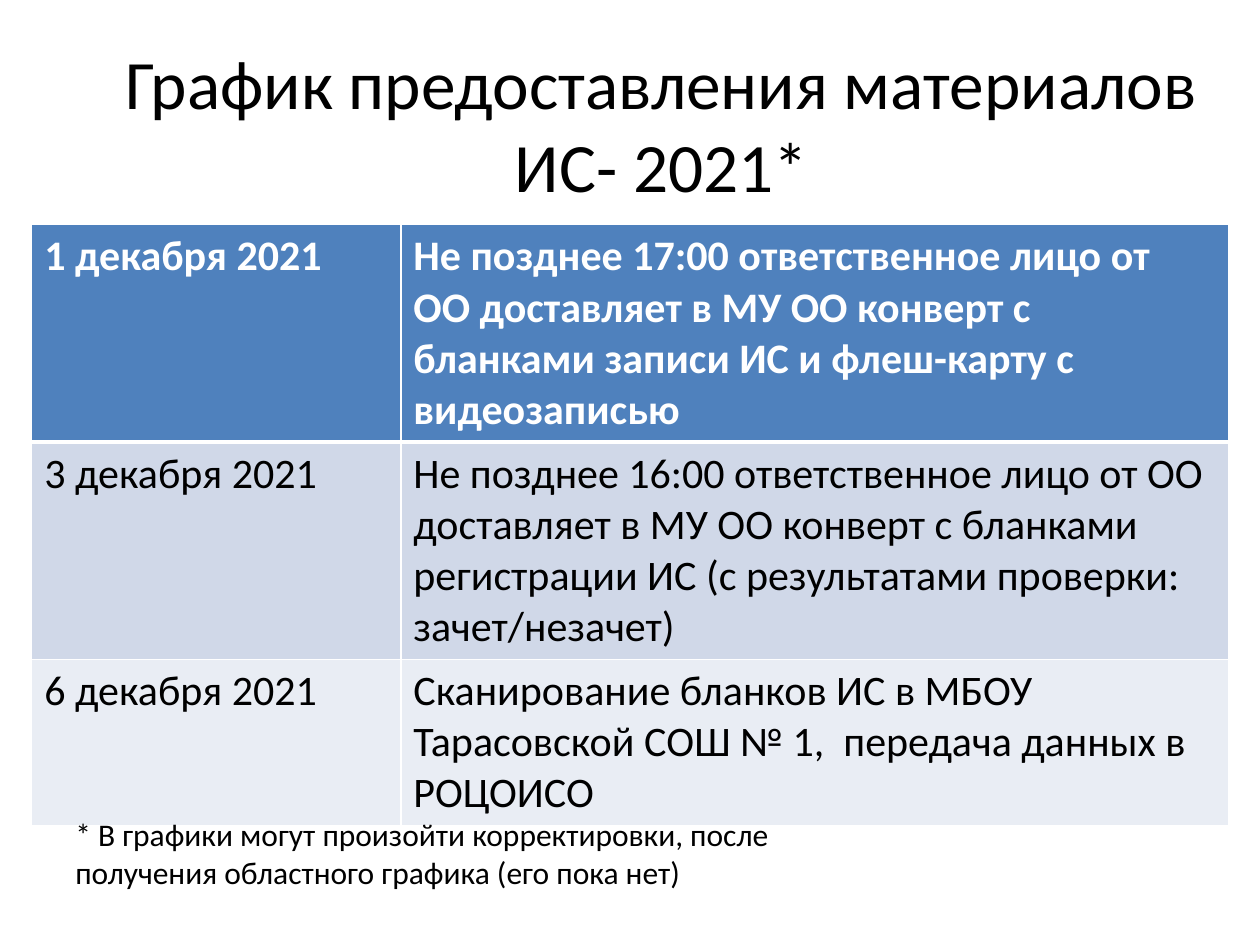
from lxml import etree
from pptx import Presentation
from pptx.dml.color import RGBColor
from pptx.enum.text import MSO_ANCHOR, PP_ALIGN
from pptx.oxml.ns import qn
from pptx.util import Cm, Pt

CENTER, LEFT = PP_ALIGN.CENTER, PP_ALIGN.LEFT
MIDDLE, TOP = MSO_ANCHOR.MIDDLE, MSO_ANCHOR.TOP

COLORS = {
    "text": "000000",
    "header_text": "FFFFFF",
    "header": "4F81BD",
    "band_dark": "D0D8E8",
    "band_light": "E9EDF4",
    "border": "FFFFFF",
}
TITLE_FONT = {"name": "Calibri", "size": Pt(39.6), "bold": False}
HEADER_FONT = {"name": "Calibri", "size": Pt(24), "bold": True}
BODY_FONT = {**HEADER_FONT, "bold": False}
NOTE_FONT = {"name": "Calibri", "size": Pt(18), "bold": False}

TITLE = "График предоставления материалов ИС- 2021*"
SCHEDULE = [
    ("1 декабря 2021",
     "Не позднее 17:00 ответственное лицо от ОО доставляет в МУ ОО конверт "
     "с бланками записи ИС и флеш-карту с видеозаписью"),
    ("3 декабря 2021",
     "Не позднее 16:00 ответственное лицо от ОО доставляет в МУ ОО конверт "
     "с бланками регистрации ИС (с результатами проверки: зачет/незачет)"),
    ("6 декабря 2021",
     "Сканирование бланков ИС в МБОУ Тарасовской СОШ № 1,  передача данных в РОЦОИСО"),
]
NOTE = ("* В графики могут произойти корректировки, после получения "
        "областного графика (его пока нет)")


def rgb(color):
    return RGBColor.from_string(COLORS[color])


def write(frame, text, font, color="text", align=LEFT):
    paragraph = frame.paragraphs[0]
    paragraph.alignment = align
    run = paragraph.add_run()
    run.text = text
    for attribute, value in font.items():
        setattr(run.font, attribute, value)
    run.font.color.rgb = rgb(color)


def add_text(slide, box, text, font, align=LEFT, anchor=TOP, bottom=Cm(0.13)):
    frame = slide.shapes.add_textbox(*box).text_frame
    frame.word_wrap = True
    frame.vertical_anchor = anchor
    frame.margin_bottom = bottom
    write(frame, text, font, align=align)


def set_borders(cell, widths):
    """Draw the left, right, top and bottom lines; widths are in points."""
    properties = cell._tc.get_or_add_tcPr()
    for index, (side, width) in enumerate(zip("LRTB", widths)):
        line = etree.Element(qn(f"a:ln{side}"), w=str(Pt(width)))
        fill = etree.SubElement(line, qn("a:solidFill"))
        etree.SubElement(fill, qn("a:srgbClr"), val=COLORS["border"])
        properties.insert(index, line)


def add_title(slide, box):
    # The deep bottom inset lifts the two lines clear of the table
    add_text(slide, box, TITLE, TITLE_FONT, CENTER, MIDDLE, bottom=Cm(1.8))


def add_schedule(slide, box):
    left, top, width, height = box
    table = slide.shapes.add_table(len(SCHEDULE), 2, left, top, width, height).table
    date_width = Cm(7.44)
    table.columns[0].width = date_width
    table.columns[1].width = width - date_width

    # The last entry runs to three lines, the others to four
    last_height = Cm(3.35)
    fills = ("header", "band_dark", "band_light")
    for r, (entry, fill) in enumerate(zip(SCHEDULE, fills)):
        is_last = r == len(SCHEDULE) - 1
        table.rows[r].height = last_height if is_last else (height - last_height) // 2
        font, color = (BODY_FONT, "text") if r else (HEADER_FONT, "header_text")
        for c, text in enumerate(entry):
            cell = table.cell(r, c)
            cell.fill.solid()
            cell.fill.fore_color.rgb = rgb(fill)
            set_borders(cell, (1, 1, 3 if r == 1 else 1, 3 if r == 0 else 1))
            write(cell.text_frame, text, font, color)


def add_note(slide, box):
    add_text(slide, box, NOTE, NOTE_FONT)


def main():
    presentation = Presentation()
    presentation.slide_width, presentation.slide_height = Cm(25.4), Cm(19.05)
    slide = presentation.slides.add_slide(presentation.slide_layouts[6])

    add_title(slide, (Cm(1.27), Cm(1.73), Cm(24.13), Cm(3.18)))
    add_schedule(slide, (Cm(0.64), Cm(4.53), Cm(24.13), Cm(12.11)))
    add_note(slide, (Cm(1.27), Cm(16.31), Cm(17.02), Cm(1.8)))

    presentation.save("out.pptx")


if __name__ == "__main__":
    main()
